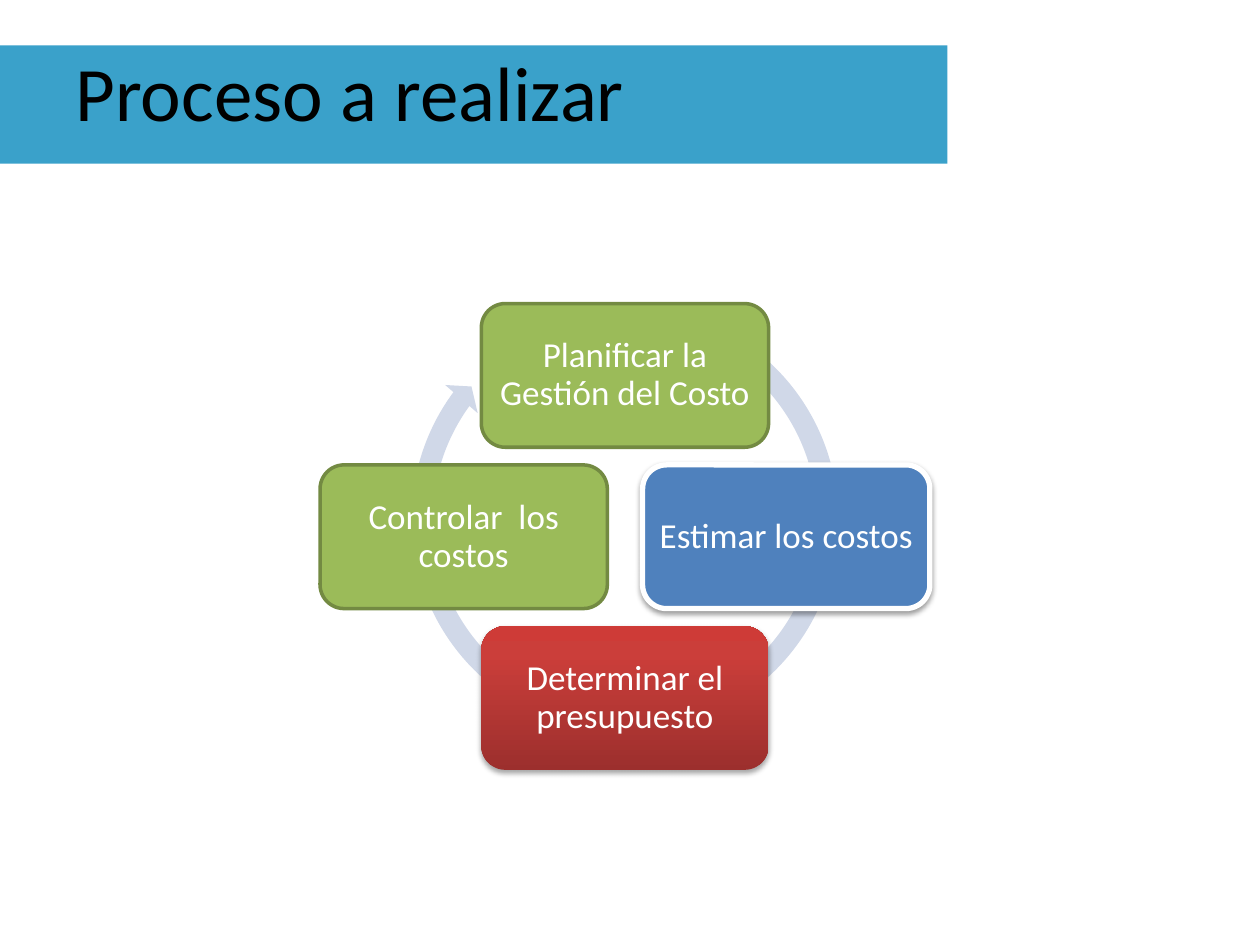
from copy import deepcopy

from lxml import etree
from pptx import Presentation
from pptx import util as u
from pptx.dml.color import RGBColor
from pptx.enum import shapes, text
from pptx.oxml.ns import qn

BLACK = RGBColor(0x00, 0x00, 0x00)
WHITE = RGBColor(0xFF, 0xFF, 0xFF)
BAND = RGBColor(0x3A, 0xA1, 0xCA)
RING = RGBColor(0xD0, 0xD8, 0xE8)
GREEN = RGBColor(0x9B, 0xBB, 0x59)
DARK_GREEN = RGBColor(0x73, 0x8A, 0x42)
BLUE = RGBColor(0x4F, 0x81, 0xBD)
REDS = [(0, RGBColor(0x9C, 0x2F, 0x2D)),
        (0.8, RGBColor(0xCB, 0x3E, 0x3A)),
        (1, RGBColor(0xCE, 0x3B, 0x37))]


class CycleSlide:
    title_font = dict(name="Calibri", size=u.Pt(44), bold=False)
    step_font = dict(name="Calibri", size=u.Pt(20), bold=False)
    step_size = (2.28, 1.14)

    def __init__(self, prs):
        self.s = prs.slides.add_slide(prs.slide_layouts[5])

    def set_font(self, p, fmt, color):
        for key, value in fmt.items():
            setattr(p.font, key, value)
        p.font.color.rgb = color

    def shape(self, kind, box, fill):
        sp = self.s.shapes.add_shape(kind, *map(u.Inches, box))
        sp.shadow.inherit = False
        if isinstance(fill, list):
            self.gradient(sp, fill)
        else:
            sp.fill.solid()
            sp.fill.fore_color.rgb = fill
        sp.line.fill.background()
        return sp

    def gradient(self, sp, stops):
        sp.fill.gradient()
        sp.fill.gradient_angle = 90
        gs_list = sp._element.spPr.find(".//" + qn("a:gsLst"))
        gs_list.append(deepcopy(gs_list[0]))
        for stop, (position, color) in zip(sp.fill.gradient_stops, stops):
            stop.position = position
            stop.color.rgb = color

    def shadow(self, sp, distance, alpha):
        effects = sp._element.spPr.find(qn("a:effectLst"))
        outer = etree.SubElement(
            effects, qn("a:outerShdw"), blurRad=str(u.Pt(3.1)),
            dist=str(u.Pt(distance)), dir="5400000", rotWithShape="0")
        color = etree.SubElement(outer, qn("a:srgbClr"), val=str(BLACK))
        etree.SubElement(color, qn("a:alpha"), val=str(alpha * 1000))

    def title(self, words, box):
        sp = self.s.shapes.title
        sp.left, sp.top, sp.width, sp.height = map(u.Inches, box)
        tf = sp.text_frame
        tf.text = words
        tf.vertical_anchor = text.MSO_ANCHOR.TOP
        p = tf.paragraphs[0]
        p.alignment = text.PP_ALIGN.LEFT
        self.set_font(p, self.title_font, BLACK)
        # Bring the title in front of the band
        self.s.shapes._spTree.append(sp._element)

    def ring(self, box, adjustments):
        sp = self.shape(shapes.MSO_SHAPE.CIRCULAR_ARROW, box, RING)
        for i, value in enumerate(adjustments):
            sp.adjustments[i] = value

    def step(self, words, center, fill, line=None, shadow=None):
        w, h = self.step_size
        box = (center[0] - w / 2, center[1] - h / 2, w, h)
        sp = self.shape(shapes.MSO_SHAPE.ROUNDED_RECTANGLE, box, fill)
        if line:
            sp.line.color.rgb, sp.line.width = line
        if shadow:
            self.shadow(sp, *shadow)
        tf = sp.text_frame
        tf.word_wrap = True
        tf.vertical_anchor = text.MSO_ANCHOR.MIDDLE
        for side in ("left", "top", "right", "bottom"):
            setattr(tf, f"margin_{side}", u.Inches(0.08))
        p = tf.paragraphs[0]
        p.text = words
        p.alignment = text.PP_ALIGN.CENTER
        p.line_spacing = 0.9
        self.set_font(p, self.step_font, WHITE)


def main():
    prs = Presentation()
    prs.slide_width, prs.slide_height = u.Inches(10), u.Inches(7.5)
    slide = CycleSlide(prs)

    # Heading
    slide.shape(shapes.MSO_SHAPE.RECTANGLE, (0, 0.36, 7.52, 0.94), BAND)
    slide.title("Proceso a realizar", (0.5, 0.3, 9, 1.25))

    # Cycle: arrow behind, four steps clockwise from the top
    slide.ring((3.18, 2.34, 3.56, 3.56), (0.047, 2.729, 129.769, 179.324, 0.048))
    cx, cy, radius = 4.96, 4.26, 1.28
    outline = (DARK_GREEN, u.Pt(2))
    steps = [
        ("Planificar la Gestión del Costo", 0, -1, GREEN, outline, None),
        ("Estimar los costos", 1, 0, BLUE, (WHITE, u.Pt(3)), (1.6, 38)),
        ("Determinar el presupuesto", 0, 1, REDS, None, (1.8, 35)),
        ("Controlar  los costos", -1, 0, GREEN, outline, None),
    ]
    for words, dx, dy, *look in steps:
        slide.step(words, (cx + dx * radius, cy + dy * radius), *look)

    prs.save("out.pptx")


if __name__ == "__main__":
    main()
